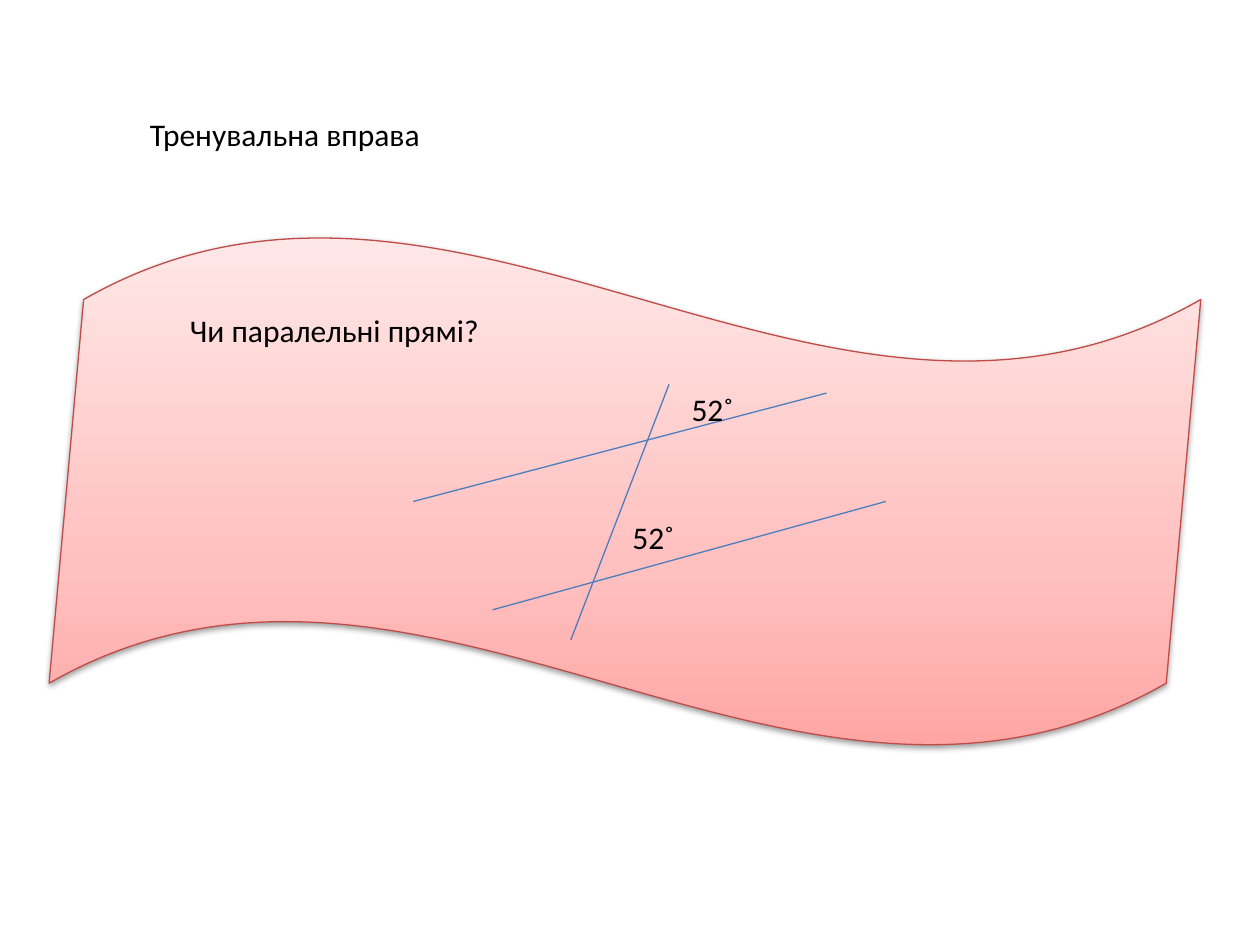
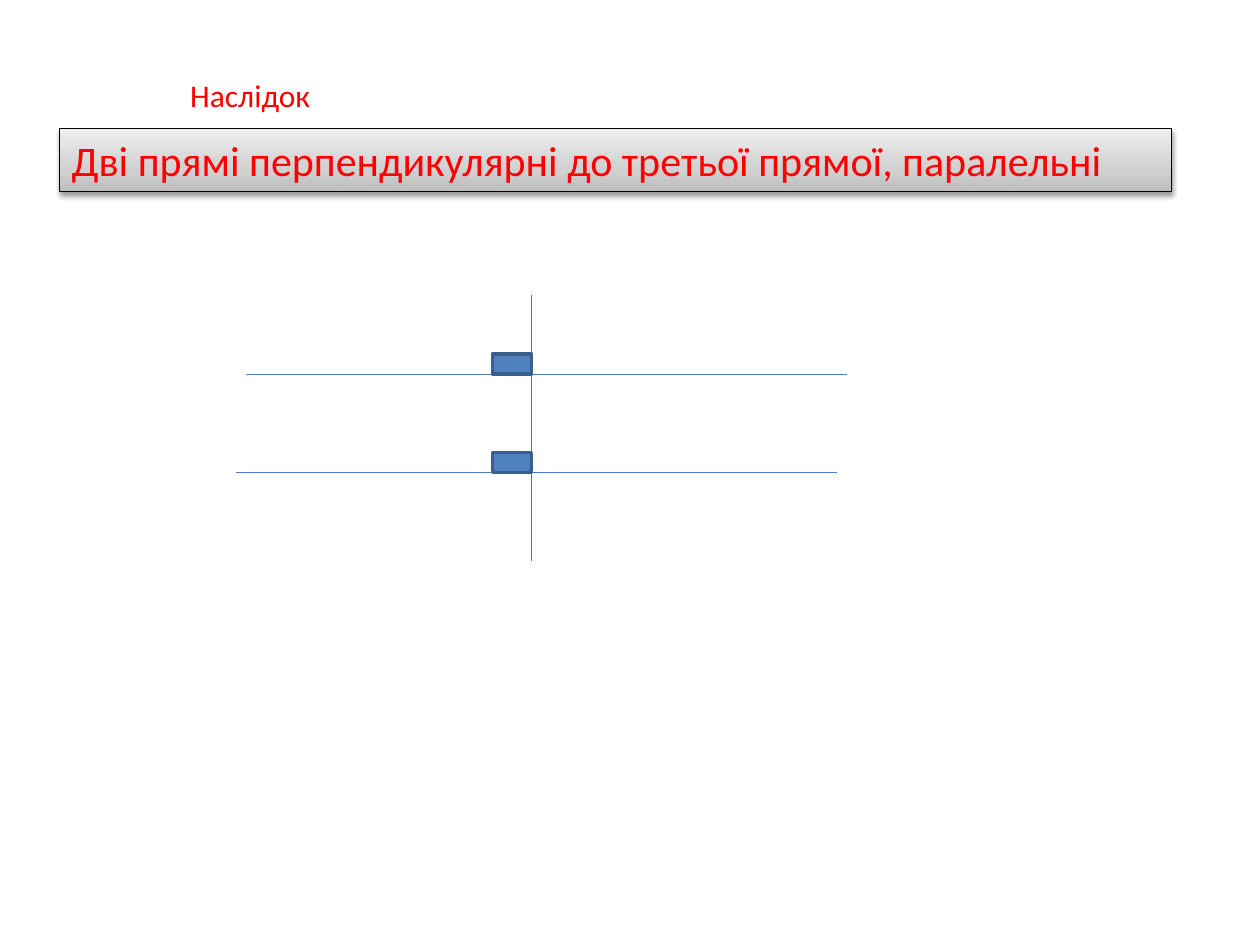
"""Build two geometry slides about parallel lines."""
from lxml import etree
from pptx import Presentation
from pptx.dml.color import RGBColor
from pptx.enum.shapes import MSO_CONNECTOR, MSO_SHAPE
from pptx.enum.text import MSO_ANCHOR, MSO_AUTO_SIZE, PP_ALIGN
from pptx.oxml import parse_xml
from pptx.oxml.ns import nsdecls, qn
from pptx.util import Inches, Pt

STRAIGHT = MSO_CONNECTOR.STRAIGHT
WAVE, RECTANGLE = MSO_SHAPE.WAVE, MSO_SHAPE.RECTANGLE
TOP, LEFT = MSO_ANCHOR.TOP, PP_ALIGN.LEFT
NO_FIT = MSO_AUTO_SIZE.NONE
TITLE_ONLY = 5

COLORS = {
    "black": "000000", "red": "FF0000", "blue line": "4B7EBC",
    "red line": "BF4C48", "square": "4F81BD", "square line": "3A5F8C",
}
PINK = [(0, "FFA6A5"), (35, "FFC0BF"), (100, "FFE7E7")]
GREY = [(0, "BDBDBD"), (35, "D1D1D1"), (100, "EEEEEE")]

EXERCISE = {
    "title": ("Тренувальна вправа", (1.09, 0.86, 3.52, 0.4), "black"),
    "panel": (WAVE, (0.39, 1.87, 9.14, 4.06), PINK, "red line", (0.125, -0.015)),
    "lines": [
        ((3.28, 3.98), (6.56, 3.12), "blue line"),
        ((3.91, 4.84), (7.03, 3.98), "blue line"),
        ((5.31, 3.05), (4.53, 5.08), "blue line"),
    ],
    "labels": [
        ("Чи паралельні прямі?", (1.41, 2.42, 3.13, 0.4)),
        ("52˚", (5.39, 3.05, 0.7, 0.4)),
        ("52˚", (4.92, 4.06, 0.55, 0.4)),
    ],
}
COROLLARY = {
    "title": ("Наслідок", (1.41, 0.55, 2.42, 0.4), "red"),
    "panel": (RECTANGLE, (0.47, 1.02, 8.83, 0.5), GREY, "black", ()),
    "statement": "Дві прямі перпендикулярні до третьої прямої, паралельні",
    "parallels": [(1.95, 2.97), (1.87, 3.75)],
    "parallel length": 4.77,
    "perpendicular": ((4.22, 2.34), (4.22, 4.45), "red line"),
    "angle mark": (0.31, 0.16),
}


def rgb(name):
    return RGBColor.from_string(COLORS[name])


def inches(values):
    return [Inches(value) for value in values]


def write(box, text, color="black", size=18):
    frame = box.text_frame
    for name, value in {"word_wrap": True, "auto_size": NO_FIT,
                        "vertical_anchor": TOP}.items():
        setattr(frame, name, value)
    para = frame.paragraphs[0]
    para.alignment = LEFT
    span = para.add_run()
    span.text = text
    for name, value in {"name": "Calibri", "size": Pt(size)}.items():
        setattr(span.font, name, value)
    span.font.color.rgb = rgb(color)


def add_page(deck, text, place, color):
    page = deck.slides.add_slide(deck.slide_layouts[TITLE_ONLY])
    title = page.shapes.title
    for name, value in zip(("left", "top", "width", "height"), inches(place)):
        setattr(title, name, value)
    write(title, text, color)
    return page


def add_outlined(page, kind, place, line, width):
    shape = page.shapes.add_shape(kind, *inches(place))
    shape.shadow.inherit = False
    shape.line.color.rgb = rgb(line)
    shape.line.width = Pt(width)
    shape.fill.solid()
    return shape


def add_panel(page, kind, place, stops, line, adjustments):
    panel = add_outlined(page, kind, place, line, 0.75)
    for index, value in enumerate(adjustments):
        panel.adjustments[index] = value
    properties = panel.element.spPr
    stop_xml = "".join(
        f'<a:gs pos="{position * 1000}"><a:srgbClr val="{color}"/></a:gs>'
        for position, color in stops)
    gradient = parse_xml(
        f'<a:gradFill {nsdecls("a")} rotWithShape="1"><a:gsLst>{stop_xml}</a:gsLst>'
        '<a:lin ang="16200000" scaled="1"/></a:gradFill>')
    properties.replace(properties.find(qn("a:solidFill")), gradient)
    properties.find(qn("a:effectLst")).append(parse_xml(
        f'<a:outerShdw {nsdecls("a")} blurRad="{Pt(3.1)}" dist="{Pt(1.6)}" '
        'dir="5400000" rotWithShape="0"><a:srgbClr val="000000">'
        '<a:alpha val="38000"/></a:srgbClr></a:outerShdw>'))
    return panel


def add_line(page, start, end, color):
    line = page.shapes.add_connector(STRAIGHT, *inches(start + end))
    line.line.color.rgb = rgb(color)
    line.line.width = Pt(0.75)
    etree.SubElement(line.element.spPr, qn("a:effectLst"))


def build_exercise(deck):
    page = add_page(deck, *EXERCISE["title"])
    add_panel(page, *EXERCISE["panel"])
    for line in EXERCISE["lines"]:
        add_line(page, *line)
    for text, place in EXERCISE["labels"]:
        write(page.shapes.add_textbox(*inches(place)), text)


def build_corollary(deck):
    page = add_page(deck, *COROLLARY["title"])
    panel = add_panel(page, *COROLLARY["panel"])
    write(panel, COROLLARY["statement"], "red", 24)
    for left, top in COROLLARY["parallels"]:
        right = left + COROLLARY["parallel length"]
        add_line(page, (left, top), (right, top), "blue line")
    add_line(page, *COROLLARY["perpendicular"])
    crossing = COROLLARY["perpendicular"][0][0]
    width, height = COROLLARY["angle mark"]
    for _, top in COROLLARY["parallels"]:
        place = (crossing - width, top - height, width, height)
        mark = add_outlined(page, RECTANGLE, place, "square line", 2)
        mark.fill.fore_color.rgb = rgb("square")


def main():
    deck = Presentation()
    deck.slide_width, deck.slide_height = inches((10, 7.5))
    build_exercise(deck)
    build_corollary(deck)
    deck.save("out.pptx")


if __name__ == "__main__":
    main()
